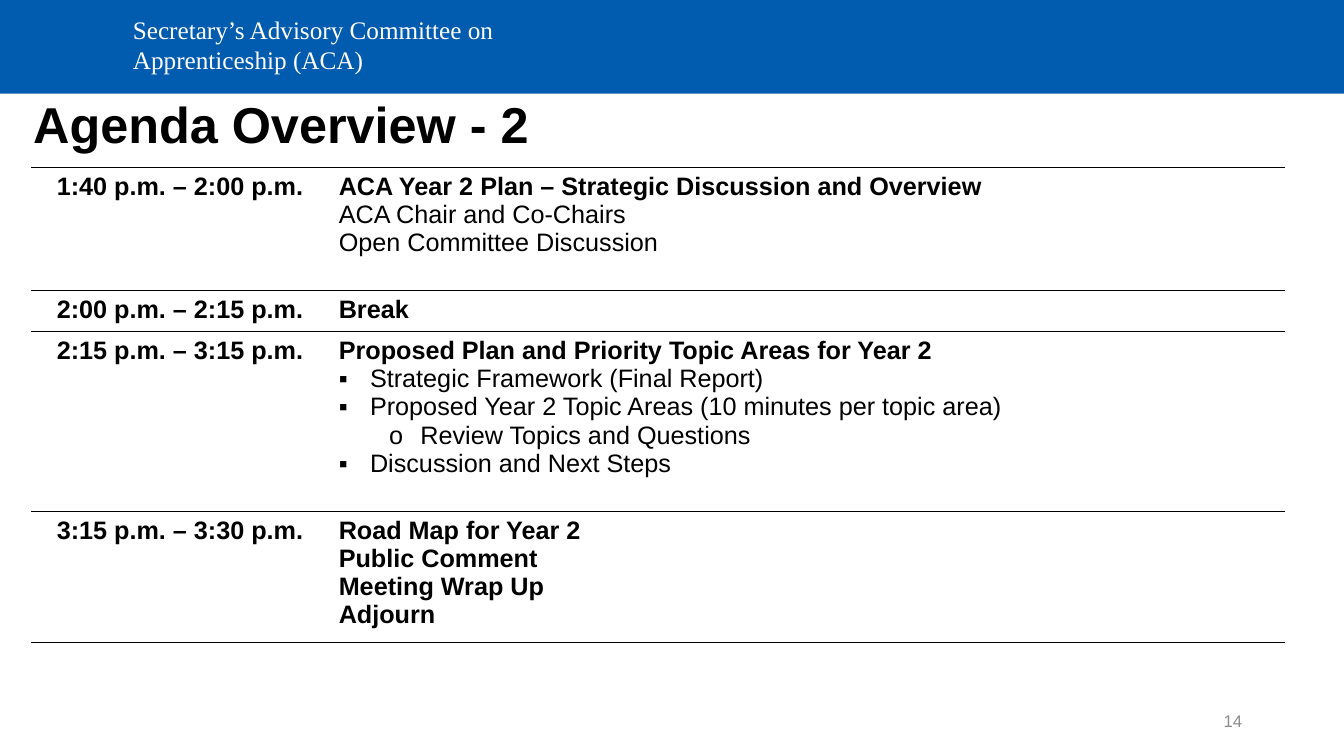
from dataclasses import dataclass

from lxml import etree
from pptx import Presentation
from pptx import util as u
from pptx.dml.color import RGBColor
from pptx.enum import shapes, text
from pptx.oxml import ns

BLUE = RGBColor(0x01, 0x5B, 0xAE)
WHITE = RGBColor(0xFF, 0xFF, 0xFF)
BLACK = RGBColor(0x00, 0x00, 0x00)
GRAY = RGBColor(0x8C, 0x8C, 0x8C)
SLIDE_WIDTH, SLIDE_HEIGHT = u.Inches(13.33), u.Inches(7.5)
INDENT = u.Inches(0.31)
LEVEL_STEP = u.Inches(0.5)


@dataclass(frozen=True)
class Line:
    words: str
    bold: bool = False
    bullet: str = ""
    level: int = 0


@dataclass(frozen=True)
class Session:
    time: str
    height: float  # percent of the slide height
    lines: tuple[Line, ...]


@dataclass(frozen=True)
class Label:
    words: str
    box: tuple[float, float, float, float]  # percent of the slide size
    size: int
    color: RGBColor
    font: str = "Arial"
    bold: bool = False
    align: text.PP_ALIGN = text.PP_ALIGN.LEFT
    anchor: text.MSO_ANCHOR = text.MSO_ANCHOR.MIDDLE
    spacing: float = 1.0


LABELS = (
    Label("Secretary’s Advisory Committee on Apprenticeship (ACA)",
          (9.15, 1.2, 29.03, 9.47), 18, WHITE, font="Times New Roman",
          anchor=text.MSO_ANCHOR.TOP),
    Label("Agenda Overview - 2", (1.73, 11.6, 88.22, 10.53), 36, BLACK,
          bold=True, spacing=0.9),
    Label("14", (70.67, 92.67, 22.5, 5.33), 12, GRAY, align=text.PP_ALIGN.RIGHT),
)

SESSIONS = (
    Session("1:40 p.m. – 2:00 p.m.", 16.33, (
        Line("ACA Year 2 Plan – Strategic Discussion and Overview", bold=True),
        Line("ACA Chair and Co-Chairs"),
        Line("Open Committee Discussion"))),
    Session("2:00 p.m. – 2:15 p.m.", 5.4, (Line("Break", bold=True),)),
    Session("2:15 p.m. – 3:15 p.m.", 23.8, (
        Line("Proposed Plan and Priority Topic Areas for Year 2", bold=True),
        Line("Strategic Framework (Final Report)", bullet="▪"),
        Line("Proposed Year 2 Topic Areas (10 minutes per topic area)", bullet="▪"),
        Line("Review Topics and Questions", bullet="o", level=1),
        Line("Discussion and Next Steps", bullet="▪"))),
    Session("3:15 p.m. – 3:30 p.m.", 16.27, (
        Line("Road Map for Year 2", bold=True),
        Line("Public Comment", bold=True),
        Line("Meeting Wrap Up", bold=True),
        Line("Adjourn", bold=True))),
)


def across(percent: float) -> int:
    return round(SLIDE_WIDTH * percent / 100)


def down(percent: float) -> int:
    return round(SLIDE_HEIGHT * percent / 100)


def set_font(paragraph, name: str, size: int, color: RGBColor, bold: bool) -> None:
    font = paragraph.font
    font.name, font.size, font.bold = name, u.Pt(size), bold
    font.color.rgb = color


def add_label(slide, label: Label) -> None:
    left, top, width, height = label.box
    frame = slide.shapes.add_textbox(
        across(left), down(top), across(width), down(height)).text_frame
    frame.word_wrap = True
    frame.vertical_anchor = label.anchor
    paragraph = frame.paragraphs[0]
    paragraph.text = label.words
    paragraph.alignment = label.align
    paragraph.line_spacing = label.spacing
    set_font(paragraph, label.font, label.size, label.color, label.bold)


def add_bullet(paragraph, line: Line) -> None:
    properties = paragraph._p.get_or_add_pPr()
    properties.set("marL", str(INDENT + line.level * LEVEL_STEP))
    properties.set("indent", str(-INDENT))
    etree.SubElement(properties, ns.qn("a:buFont"), typeface="Arial")
    etree.SubElement(properties, ns.qn("a:buChar"), char=line.bullet)


def rule_cell(cell) -> None:
    """Leave the cell clear, with black rules above and below only."""
    cell.fill.background()
    properties = cell._tc.get_or_add_tcPr()
    for place, side in enumerate(("lnL", "lnR", "lnT", "lnB")):
        border = etree.Element(ns.qn(f"a:{side}"), w=str(u.Pt(1)))
        if side in ("lnT", "lnB"):
            fill = etree.SubElement(border, ns.qn("a:solidFill"))
            etree.SubElement(fill, ns.qn("a:srgbClr"), val=str(BLACK))
        else:
            etree.SubElement(border, ns.qn("a:noFill"))
        properties.insert(place, border)


def fill_cell(cell, lines: tuple[Line, ...], align: text.PP_ALIGN) -> None:
    rule_cell(cell)
    frame = cell.text_frame
    for number, line in enumerate(lines):
        paragraph = frame.add_paragraph() if number else frame.paragraphs[0]
        paragraph.text = line.words
        paragraph.alignment = align
        paragraph.level = line.level
        if line.bullet:
            add_bullet(paragraph, line)
        set_font(paragraph, "Arial", 18, BLACK, line.bold)


def add_agenda(slide) -> None:
    widths = (22.13, 71.12)
    agenda = slide.shapes.add_table(
        len(SESSIONS), len(widths), across(2.33), down(22.13), across(sum(widths)),
        down(sum(session.height for session in SESSIONS))).table
    agenda.first_row = agenda.horz_banding = False
    for column, width in zip(agenda.columns, widths):
        column.width = across(width)
    for row, session in zip(agenda.rows, SESSIONS):
        row.height = down(session.height)
        time, topics = row.cells
        fill_cell(time, (Line(session.time, bold=True),), text.PP_ALIGN.CENTER)
        fill_cell(topics, session.lines, text.PP_ALIGN.LEFT)


def main() -> None:
    deck = Presentation()
    deck.slide_width, deck.slide_height = SLIDE_WIDTH, SLIDE_HEIGHT
    slide = deck.slides.add_slide(deck.slide_layouts[6])

    # Header band
    band = slide.shapes.add_shape(
        shapes.MSO_SHAPE.RECTANGLE, 0, 0, SLIDE_WIDTH, down(12.4))
    band.shadow.inherit = False
    band.fill.solid()
    band.fill.fore_color.rgb = BLUE
    band.line.fill.background()

    # Committee name, title and page number
    for label in LABELS:
        add_label(slide, label)

    # Agenda table
    add_agenda(slide)
    deck.save("out.pptx")


if __name__ == "__main__":
    main()
